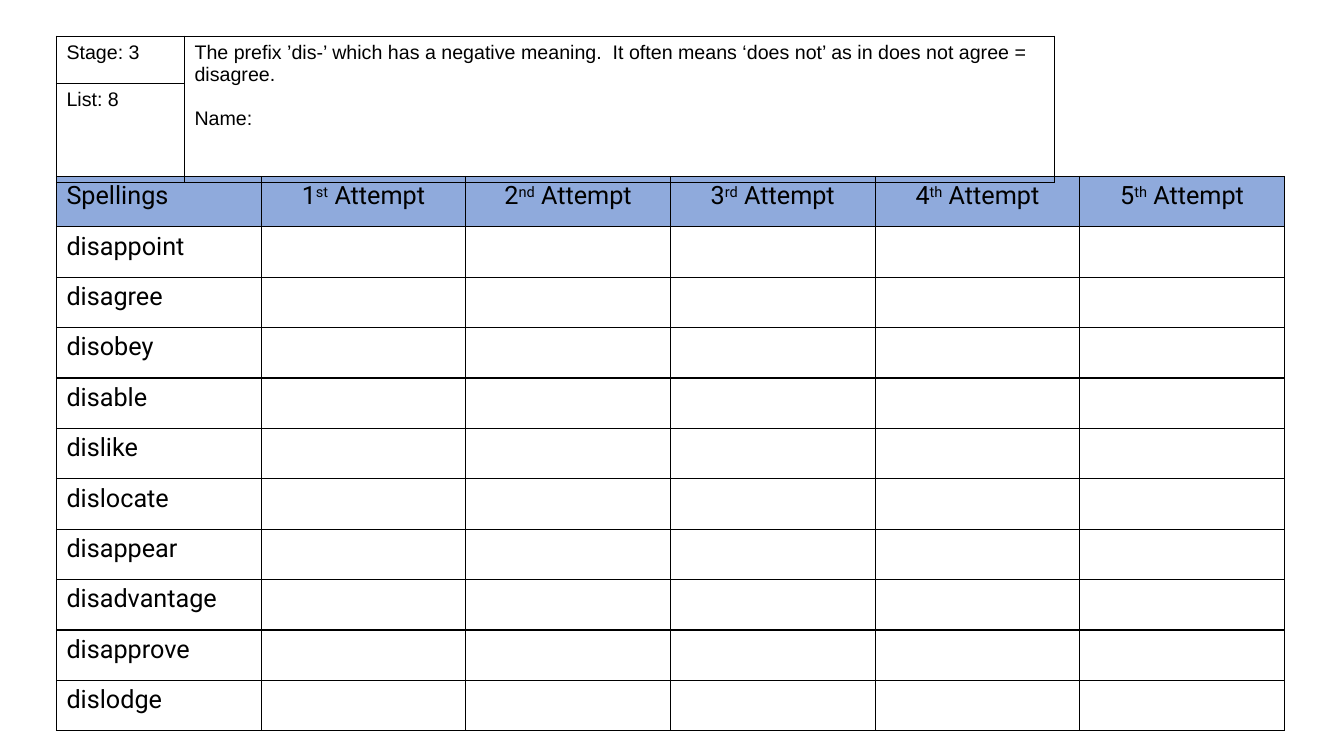
from lxml.etree import SubElement
from pptx import Presentation
from pptx.dml.color import RGBColor
from pptx.enum.text import PP_ALIGN
from pptx.oxml.ns import qn
from pptx.util import Inches, Pt

COLORS = {"ink": "000000", "header": "8FAADC"}
LEFT = 0.56
INFO_TOP, INFO_COLS, INFO_ROWS = 0.36, (1.27, 8.63), (0.47, 0.98)
GRID_TOP, COL_W, ROW_H = 1.75, 2.03, 0.5
ORDINALS = ("st", "nd", "rd", "th", "th")
WORDS = ("disappoint", "disagree", "disobey", "disable", "dislike", "dislocate",
         "disappear", "disadvantage", "disapprove", "dislodge")
RULE = ("The prefix ’dis-’ which has a negative meaning.  It often means "
        "‘does not’ as in does not agree = disagree.")


def set_borders(cell):
    tc_pr = cell._tc.get_or_add_tcPr()
    for side in ("lnL", "lnR", "lnT", "lnB"):
        ln = SubElement(tc_pr, qn(f"a:{side}"), w=str(Pt(1)))
        fill = SubElement(ln, qn("a:solidFill"))
        SubElement(fill, qn("a:srgbClr"), val=COLORS["ink"])


def add_ruled_table(s, top, cols, rows):
    """Add an unfilled table with a thin line round every cell."""
    frame = s.shapes.add_table(len(rows), len(cols), Inches(LEFT), Inches(top),
                               Inches(sum(cols)), Inches(sum(rows)))
    table = frame.table
    table.first_row = table.horz_banding = False
    for col, width in zip(table.columns, cols):
        col.width = Inches(width)
    for row, height in zip(table.rows, rows):
        row.height = Inches(height)
    for cell in table.iter_cells():
        set_borders(cell)
        cell.fill.background()
    return table


def add_run(p, text, font, size, raised=False):
    r = p.add_run()
    r.text = text
    r.font.name, r.font.size = font, Pt(size)
    r.font.color.rgb = RGBColor.from_string(COLORS["ink"])
    if raised:
        r._r.get_or_add_rPr().set("baseline", "30000")


def add_spelling_grid(s):
    table = add_ruled_table(s, GRID_TOP, [COL_W] * (len(ORDINALS) + 1),
                            [ROW_H] * (len(WORDS) + 1))
    for row, word in enumerate(("Spellings", *WORDS)):
        add_run(table.cell(row, 0).text_frame.paragraphs[0], word, "Roboto", 18)
    for number, ordinal in enumerate(ORDINALS, 1):
        p = table.cell(0, number).text_frame.paragraphs[0]
        p.alignment = PP_ALIGN.CENTER
        add_run(p, str(number), "Roboto", 18)
        add_run(p, ordinal, "Roboto", 18, raised=True)
        add_run(p, " Attempt", "Roboto", 18)
    for cell in table.rows[0].cells:
        cell.fill.solid()
        cell.fill.fore_color.rgb = RGBColor.from_string(COLORS["header"])


def add_info_table(s):
    table = add_ruled_table(s, INFO_TOP, INFO_COLS, INFO_ROWS)
    table.cell(0, 1).merge(table.cell(1, 1))
    for row, col, text in ((0, 0, "Stage: 3"), (1, 0, "List: 8"), (0, 1, RULE)):
        add_run(table.cell(row, col).text_frame.paragraphs[0], text, "Arial", 14)
    name = table.cell(0, 1).text_frame.add_paragraph()
    name.space_before = Pt(16)
    add_run(name, "Name:", "Arial", 14)


def main():
    prs = Presentation()
    prs.slide_width, prs.slide_height = Inches(13.33), Inches(7.5)
    s = prs.slides.add_slide(prs.slide_layouts[6])
    add_spelling_grid(s)
    add_info_table(s)
    prs.save("out.pptx")


if __name__ == "__main__":
    main()
